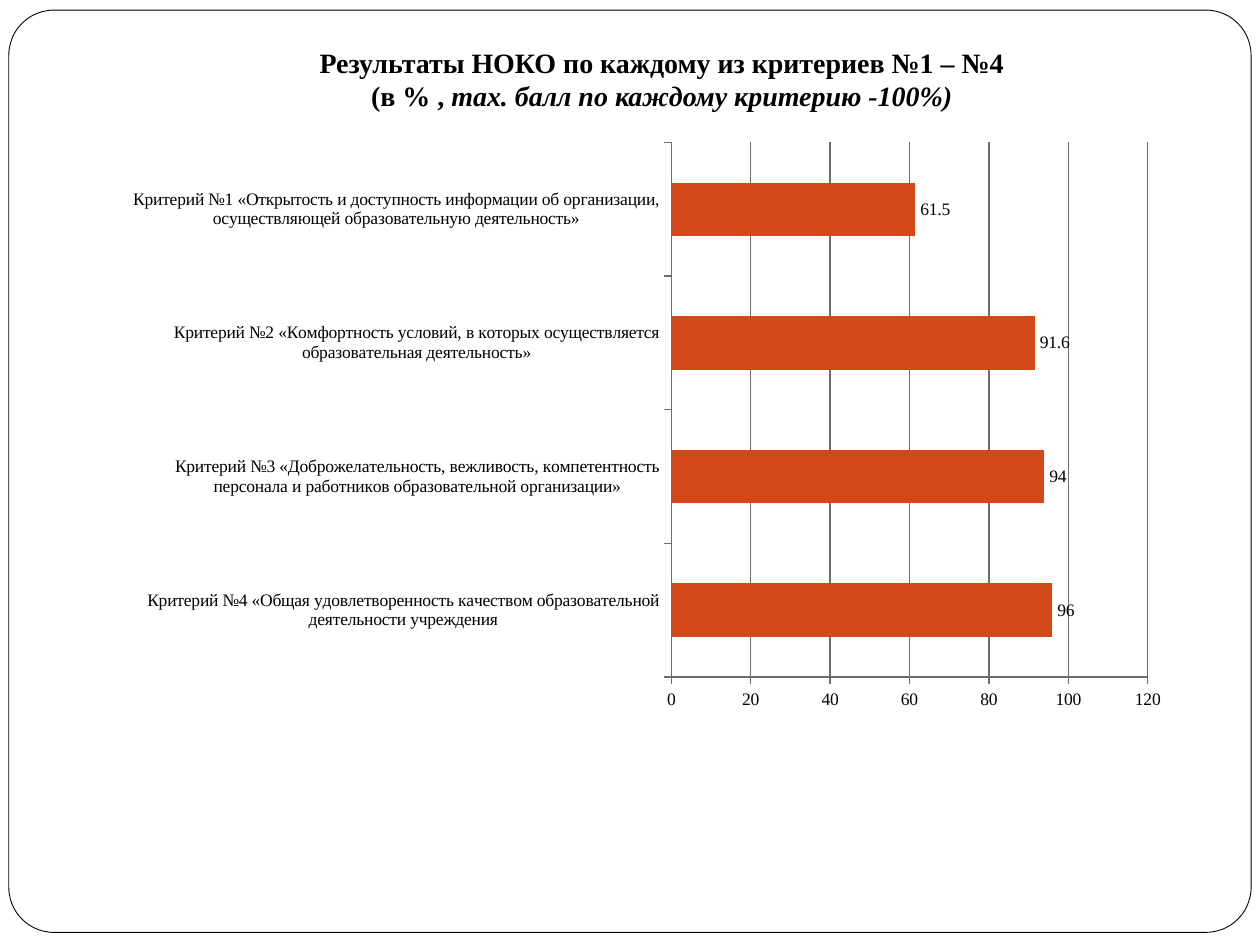
from lxml import etree
from pptx import Presentation
from pptx.chart.data import CategoryChartData
from pptx.dml.color import RGBColor
from pptx.enum.chart import XL_CHART_TYPE, XL_LABEL_POSITION, XL_TICK_MARK
from pptx.enum.shapes import MSO_SHAPE
from pptx.enum.text import MSO_ANCHOR, MSO_AUTO_SIZE, PP_ALIGN
from pptx.oxml.ns import qn
from pptx.util import Inches, Pt

BAR_CLUSTERED = XL_CHART_TYPE.BAR_CLUSTERED
OUTSIDE_END = XL_LABEL_POSITION.OUTSIDE_END
TICK_OUTSIDE = XL_TICK_MARK.OUTSIDE
ROUNDED = MSO_SHAPE.ROUNDED_RECTANGLE

BLACK = RGBColor(0x00, 0x00, 0x00)
WHITE = RGBColor(0xFF, 0xFF, 0xFF)
GREY = RGBColor(0x6E, 0x6E, 0x6E)
ORANGE = RGBColor(0xD3, 0x48, 0x17)
FONT = "Times New Roman"
TITLE_ONLY = 5

# Bars are listed from the bottom of the chart upwards.
SCORES = [
    ("Критерий №4 «Общая удовлетворенность качеством образовательной "
     "деятельности учреждения", 96),
    ("Критерий №3 «Доброжелательность, вежливость, компетентность персонала "
     "и работников образовательной организации»", 94),
    ("Критерий №2 «Комфортность условий, в которых осуществляется "
     "образовательная деятельность»", 91.6),
    ("Критерий №1 «Открытость и доступность информации об организации, "
     "осуществляющей образовательную деятельность»", 61.5),
]
TITLE_LINES = [
    [("Результаты НОКО по каждому из критериев №1 – №4 ", False)],
    [("(в % , ", False), ("max. балл по каждому критерию -100%) ", True)],
]
PLOT_AREA = {"x": 0.508, "y": 0.051, "w": 0.446, "h": 0.799}


def style_font(font, size):
    font.name = FONT
    font.size = Pt(size)
    font.color.rgb = BLACK


def add_frame(page):
    """Add the rounded border behind everything else."""
    frame = page.shapes.add_shape(
        ROUNDED, Inches(0.07), Inches(0.08), Inches(9.86), Inches(7.32))
    frame.adjustments[0] = 0.049
    frame.shadow.inherit = False
    frame.fill.solid()
    frame.fill.fore_color.rgb = WHITE
    frame.line.color.rgb = BLACK
    frame.line.width = Pt(0.5)
    frame.element.getparent().insert(2, frame.element)


def fix_plot_area(chart):
    """Give the inner plot area its place as fractions of the chart."""
    plot_area = chart.element.find(".//" + qn("c:plotArea"))
    layout = plot_area.find(qn("c:layout"))
    if layout is None:
        layout = etree.Element(qn("c:layout"))
        plot_area.insert(0, layout)
    manual = etree.SubElement(layout, qn("c:manualLayout"))
    settings = [("layoutTarget", "inner"), ("xMode", "edge"), ("yMode", "edge")]
    for name, value in settings + list(PLOT_AREA.items()):
        etree.SubElement(manual, qn("c:" + name)).set("val", str(value))


def style_axis(axis):
    axis.major_tick_mark = TICK_OUTSIDE
    axis.format.line.color.rgb = GREY
    axis.format.line.width = Pt(0.75)
    style_font(axis.tick_labels.font, 10)


def add_score_chart(page):
    chart_data = CategoryChartData()
    chart_data.categories = [criterion for criterion, _ in SCORES]
    chart_data.add_series("Series 1", [score for _, score in SCORES])
    chart = page.shapes.add_chart(
        BAR_CLUSTERED, Inches(1.02), Inches(0.86), Inches(8.48), Inches(5.31),
        chart_data).chart
    chart.has_title = False
    chart.has_legend = False
    style_font(chart.font, 10)
    fix_plot_area(chart)

    plot = chart.plots[0]
    plot.gap_width = 150
    plot.vary_by_categories = False
    series = plot.series[0]
    series.format.fill.solid()
    series.format.fill.fore_color.rgb = ORANGE
    labels = series.data_labels
    labels.show_value = True
    labels.position = OUTSIDE_END
    style_font(labels.font, 10)

    for axis in (chart.category_axis, chart.value_axis):
        style_axis(axis)
    values = chart.value_axis
    values.minimum_scale = 0
    values.maximum_scale = 120
    values.major_unit = 20
    values.has_major_gridlines = True
    values.major_gridlines.format.line.color.rgb = GREY
    values.major_gridlines.format.line.width = Pt(0.75)


def fill_title(page):
    title = page.shapes.title
    title.left, title.top = Inches(1.02), Inches(0.31)
    title.width, title.height = Inches(8.52), Inches(0.64)
    frame = title.text_frame
    frame.word_wrap = True
    frame.auto_size = MSO_AUTO_SIZE.SHAPE_TO_FIT_TEXT
    frame.vertical_anchor = MSO_ANCHOR.TOP
    for number, line in enumerate(TITLE_LINES):
        para = frame.add_paragraph() if number else frame.paragraphs[0]
        para.alignment = PP_ALIGN.CENTER
        for text, italic in line:
            span = para.add_run()
            span.text = text
            style_font(span.font, 16)
            span.font.bold = True
            span.font.italic = italic


def main():
    deck = Presentation()
    deck.slide_width, deck.slide_height = Inches(10), Inches(7.5)
    page = deck.slides.add_slide(deck.slide_layouts[TITLE_ONLY])
    add_frame(page)
    add_score_chart(page)
    fill_title(page)
    deck.save("out.pptx")


if __name__ == "__main__":
    main()
